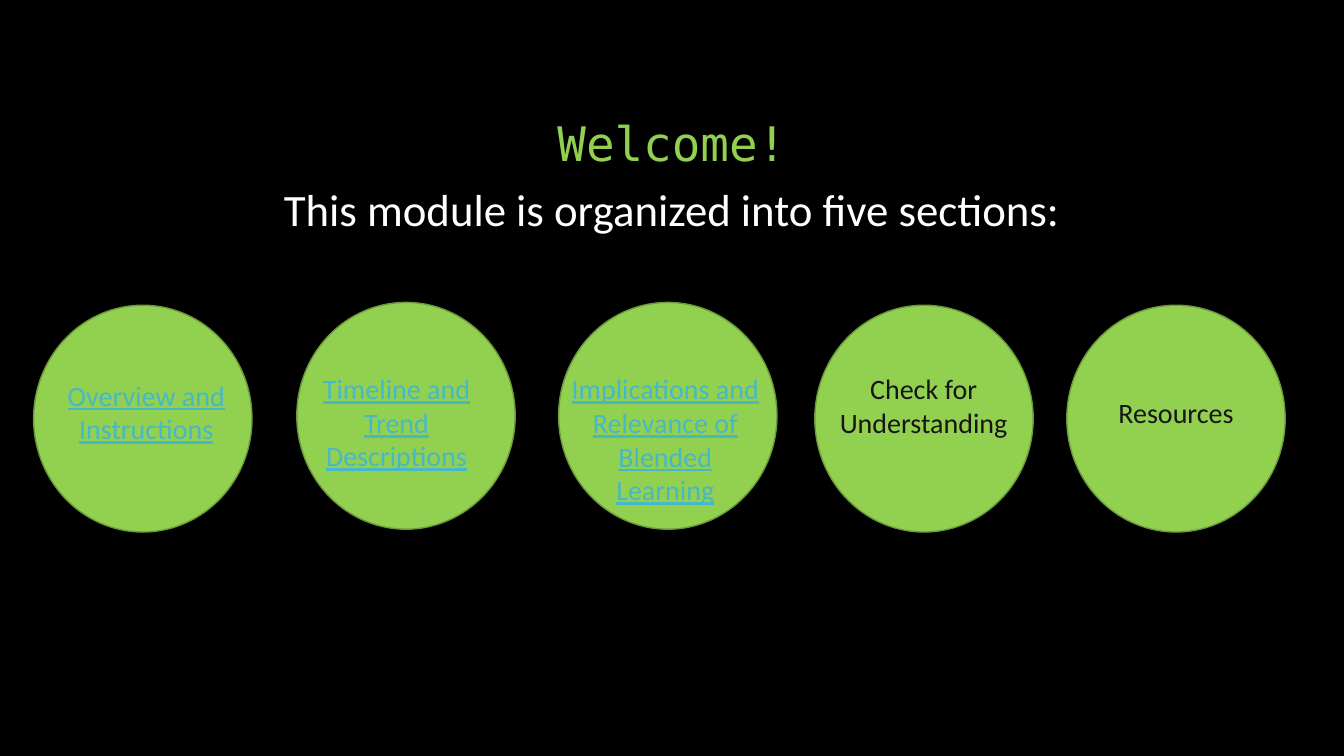
from dataclasses import dataclass

from pptx import Presentation
from pptx.dml.color import RGBColor
from pptx.enum.shapes import MSO_SHAPE
from pptx.enum.text import MSO_ANCHOR, PP_ALIGN
from pptx.slide import Slide
from pptx.util import Pt

OVAL = MSO_SHAPE.OVAL
CENTER = PP_ALIGN.CENTER
TOP = MSO_ANCHOR.TOP
BOTTOM = MSO_ANCHOR.BOTTOM

BLACK = RGBColor(0x00, 0x00, 0x00)
WHITE = RGBColor(0xFF, 0xFF, 0xFF)
GREEN = RGBColor(0x92, 0xD0, 0x50)
EDGE = RGBColor(0x6C, 0x9A, 0x3B)
TEAL = RGBColor(0x47, 0xB8, 0xC7)
INK = RGBColor(0x16, 0x16, 0x16)

DISC_W, DISC_H = 156, 162


@dataclass
class Box:
    left: float
    top: float
    width: float
    height: float


@dataclass
class Section:
    label: str
    left: float
    top: float
    box: Box
    linked: bool = False


SECTIONS = [
    Section("Overview and Instructions", 24, 218, Box(36, 266.5, 137, 56), True),
    Section("Timeline and Trend Descriptions", 212, 216, Box(213, 262, 140.5, 80), True),
    Section("Implications and Relevance of Blended Learning", 399, 216,
            Box(399, 262, 152.5, 104), True),
    Section("Check for Understanding", 582, 218, Box(587, 262, 145.5, 56)),
    Section("Resources", 762, 218, Box(777, 279, 126, 32)),
]


def add_text(slide: Slide, text: str, box: Box, *, size: float, color: RGBColor,
             font: str = "Calibri", under: bool = False,
             anchor: MSO_ANCHOR = TOP, spacing: float = 1.0) -> None:
    shape = slide.shapes.add_textbox(
        Pt(box.left), Pt(box.top), Pt(box.width), Pt(box.height))
    frame = shape.text_frame
    frame.word_wrap = True
    frame.vertical_anchor = anchor
    para = frame.paragraphs[0]
    para.alignment = CENTER
    para.line_spacing = spacing
    run = para.add_run()
    run.text = text
    run.font.name = font
    run.font.size = Pt(size)
    run.font.color.rgb = color
    run.font.underline = under


def add_disc(slide: Slide, left: float, top: float) -> None:
    disc = slide.shapes.add_shape(OVAL, Pt(left), Pt(top), Pt(DISC_W), Pt(DISC_H))
    disc.shadow.inherit = False
    disc.fill.solid()
    disc.fill.fore_color.rgb = GREEN
    disc.line.color.rgb = EDGE
    disc.line.width = Pt(1)


def main() -> None:
    deck = Presentation()
    deck.slide_width, deck.slide_height = Pt(960), Pt(540)
    slide = deck.slides.add_slide(deck.slide_layouts[6])
    slide.background.fill.solid()
    slide.background.fill.fore_color.rgb = BLACK

    add_text(slide, "Welcome!", Box(120, 36, 720, 90), size=34, color=GREEN,
             font="DejaVu Sans Mono", anchor=BOTTOM, spacing=0.9)
    add_text(slide, "This module is organized into five sections:",
             Box(120, 126, 720, 46), size=32, color=WHITE)

    for part in SECTIONS:
        add_disc(slide, part.left, part.top)
    for part in SECTIONS:
        add_text(slide, part.label, part.box, size=20,
                 color=TEAL if part.linked else INK, under=part.linked)

    deck.save("out.pptx")


if __name__ == "__main__":
    main()
